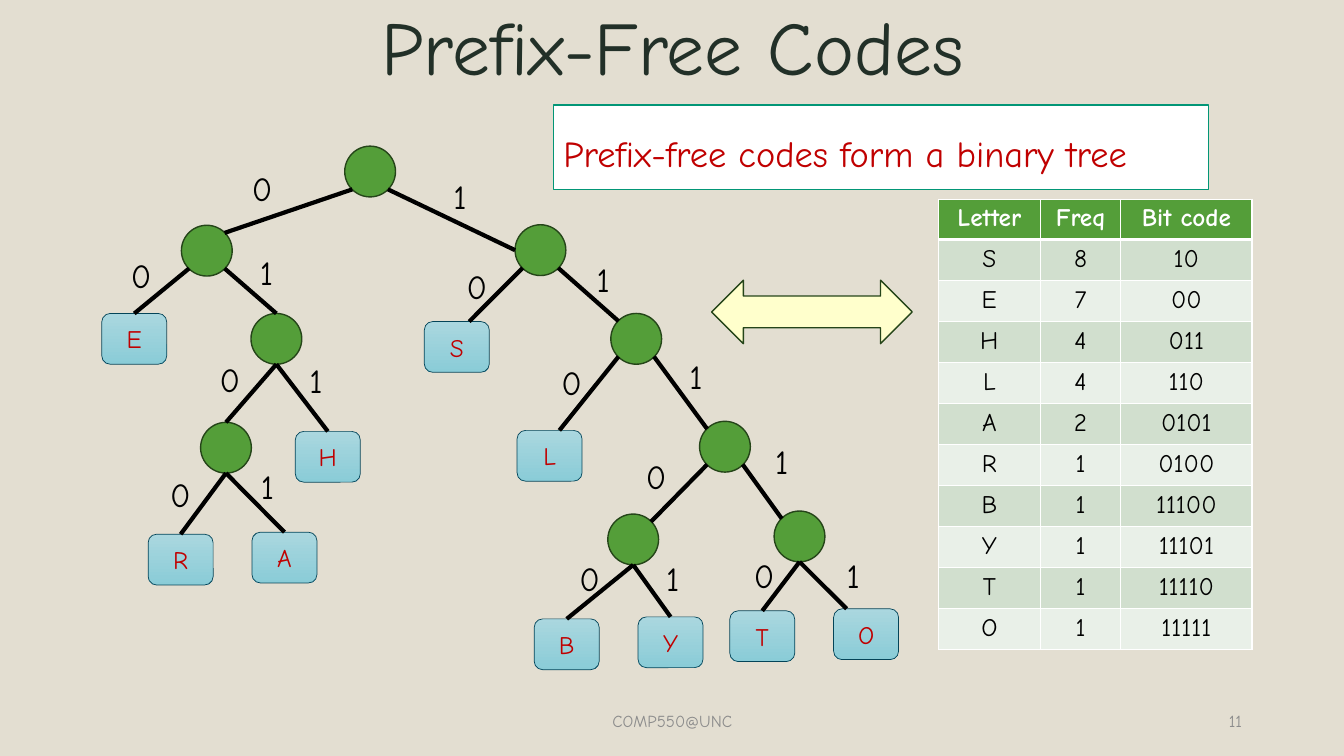
from dataclasses import dataclass
from typing import Optional

from lxml import etree
from pptx import Presentation
from pptx.dml.color import RGBColor
from pptx.enum.shapes import MSO_CONNECTOR, MSO_SHAPE
from pptx.enum.text import MSO_ANCHOR, MSO_AUTO_SIZE, PP_ALIGN
from pptx.oxml.ns import qn
from pptx.util import Inches, Pt

STRAIGHT = MSO_CONNECTOR.STRAIGHT
OVAL, ROUNDED = MSO_SHAPE.OVAL, MSO_SHAPE.ROUNDED_RECTANGLE
RECT, ARROW = MSO_SHAPE.RECTANGLE, MSO_SHAPE.LEFT_RIGHT_ARROW
LEFT_ALIGN, CENTER, RIGHT_ALIGN = PP_ALIGN.LEFT, PP_ALIGN.CENTER, PP_ALIGN.RIGHT
TOP_ANCHOR, MIDDLE = MSO_ANCHOR.TOP, MSO_ANCHOR.MIDDLE
GROW = MSO_AUTO_SIZE.SHAPE_TO_FIT_TEXT

FONT = "Comic Neue"
GREEN, DARK_GREEN, RED = "549E39", "254519", "C00000"
BLACK, WHITE, GRAY = "000000", "FFFFFF", "8C8C8C"
BANDS = ("E9F0E8", "D1DFCE")
COLS, ROWS = 133.33, 75
NODE_SIZE, LEAF_WIDTH = 5.04, 6.45
LABEL_WIDTHS = {"0": 4.1, "1": 3.5}

TOP, BOTTOM, LEFT = (0.5, 0), (0.5, 1), (0, 0.5)
TOP_LEFT, TOP_RIGHT = (0.15, 0.15), (0.85, 0.15)
LOW_LEFT, LOW_RIGHT = (0.15, 0.85), (0.85, 0.85)
SPREAD = {"0": LOW_LEFT, "1": LOW_RIGHT}
JOINED = {"0": BOTTOM, "1": BOTTOM}


@dataclass
class Node:
    code: str
    col: float
    row: float
    label: tuple = ()
    entry: tuple = TOP
    letter: str = ""
    exits: Optional[dict] = None

    @property
    def width(self) -> float:
        return LEAF_WIDTH if self.letter else NODE_SIZE

    def at(self, share: tuple) -> tuple:
        return self.col + share[0] * self.width, self.row + share[1] * NODE_SIZE


TREE = [
    Node("", 34.2, 14.5, exits=SPREAD),
    Node("0", 18, 22.35, (24, 16.2), TOP_RIGHT, exits=SPREAD),
    Node("1", 51.1, 22.3, (44, 17), LEFT, exits=SPREAD),
    Node("01", 24.9, 31.1, (24.8, 24.5), exits=JOINED),
    Node("010", 19.9, 41.9, (20.8, 35.1), exits=JOINED),
    Node("11", 60.6, 31.1, (58.2, 25.2), TOP_LEFT, exits=SPREAD),
    Node("111", 69.4, 41.8, (67.4, 34.8), TOP_LEFT, exits=SPREAD),
    Node("1110", 60.3, 51, (63.1, 44.7), TOP_RIGHT, exits=JOINED),
    Node("1111", 76.8, 50.7, (75.9, 43.3), TOP_LEFT, exits=JOINED),
    Node("00", 10.1, 31.1, (12, 24.8), letter="E"),
    Node("0100", 14.7, 53, (15.9, 46.5), letter="R"),
    Node("0101", 25, 52.8, (24.9, 45.7), letter="A"),
    Node("011", 29.3, 42.8, (29.7, 35.2), letter="H"),
    Node("10", 42.1, 31.9, (45.3, 25.9), (0.69, 0), "S"),
    Node("110", 51.3, 42.7, (54.7, 35.4), (0.65, 0), "L"),
    Node("11100", 53, 61.4, (56.5, 54.9), letter="B"),
    Node("11101", 63.3, 61.2, (65.1, 54.9), letter="Y"),
    Node("11110", 72.4, 60.6, (73.8, 54.6), letter="T"),
    Node("11111", 82.7, 60.4, (83, 54.6), (0.2, 0), "O"),
]
FREQS = {"S": 8, "E": 7, "H": 4, "L": 4, "A": 2, "R": 1, "B": 1, "Y": 1, "T": 1, "O": 1}


def rgb(color: str) -> RGBColor:
    return RGBColor.from_string(color)


def grid(*cells: float) -> list:
    return [Inches(c / 10) for c in cells]


def write(tf, text: str, size: float, color: str, align=CENTER, anchor=MIDDLE, bold: bool = False):
    tf.text = text
    tf.vertical_anchor = anchor
    p = tf.paragraphs[0]
    p.alignment = align
    r = p.runs[0]
    r.font.name, r.font.size, r.font.bold = FONT, Pt(size), bold
    r.font.color.rgb = rgb(color)
    return p


def add_text(s, box: tuple, text: str, size: float, color: str, align, anchor=MIDDLE, wrap: bool = True):
    tf = s.shapes.add_textbox(*grid(*box)).text_frame
    tf.word_wrap = wrap
    if not wrap:
        tf.auto_size = GROW
    write(tf, text, size, color, align, anchor)


def add_box(s, kind, box: tuple, fill: str, line: str, width: float = 1):
    sp = s.shapes.add_shape(kind, *grid(*box))
    sp.shadow.inherit = False
    sp.fill.solid()
    sp.fill.fore_color.rgb = rgb(fill)
    sp.line.color.rgb = rgb(line)
    sp.line.width = Pt(width)
    return sp


def add_node(s, node: Node):
    box = (node.col, node.row, node.width, NODE_SIZE)
    if not node.letter:
        return add_box(s, OVAL, box, GREEN, DARK_GREEN)
    sp = add_box(s, ROUNDED, box, BANDS[0], "044458", 0.5)
    sp.fill.gradient()
    sp.fill.gradient_angle = 270
    for stop, color in zip(sp.fill.gradient_stops, ("AAD7DF", "8ACCD7")):
        stop.color.rgb = rgb(color)
    write(sp.text_frame, node.letter, 18, RED)
    return sp


def add_edge(s, parent: Node, child: Node, child_shape) -> None:
    bit = child.code[-1]
    ends = parent.at(parent.exits[bit]) + child.at(child.entry)
    edge = s.shapes.add_connector(STRAIGHT, *grid(*ends))
    if child.letter and child.entry == TOP:
        edge.end_connect(child_shape, 0)
    edge.line.color.rgb = rgb(BLACK)
    edge.line.width = Pt(3)
    etree.SubElement(edge._element.spPr, qn("a:effectLst"))
    add_text(s, (*child.label, LABEL_WIDTHS[bit], 5), bit, 24, BLACK, LEFT_ALIGN, TOP_ANCHOR, wrap=False)


def add_tree(s) -> None:
    shapes = {node.code: add_node(s, node) for node in TREE}
    nodes = {node.code: node for node in TREE}
    for node in TREE[1:]:
        add_edge(s, nodes[node.code[:-1]], node, shapes[node.code])


def set_borders(cell, row: int) -> None:
    widths = {"L": 1, "R": 1, "T": 3 if row == 1 else 1, "B": 3 if row == 0 else 1}
    for side, width in widths.items():
        ln = etree.SubElement(cell._tc.get_or_add_tcPr(), qn(f"a:ln{side}"), w=str(Pt(width)))
        fill = etree.SubElement(ln, qn("a:solidFill"))
        etree.SubElement(fill, qn("a:srgbClr"), val=WHITE)


def add_code_table(s) -> None:
    codes = {node.letter: node.code for node in TREE if node.letter}
    rows = [("Letter", "Freq", "Bit code")]
    rows += [(letter, str(freq), codes[letter]) for letter, freq in FREQS.items()]
    table = s.shapes.add_table(len(rows), 3, *grid(93.1, 19.75, 31.1, 44.6)).table
    for column, width in zip(table.columns, grid(10.1, 8, 13)):
        column.width = width
    for i, values in enumerate(rows):
        table.rows[i].height = grid(4.07 if i else 3.9)[0]
        for j, value in enumerate(values):
            cell = table.cell(i, j)
            set_borders(cell, i)
            cell.fill.solid()
            cell.fill.fore_color.rgb = rgb(BANDS[i % 2] if i else GREEN)
            write(cell.text_frame, value, 18, BLACK if i else WHITE, anchor=TOP_ANCHOR, bold=i == 0)


def set_title(s) -> None:
    title = s.shapes.title
    title.left, title.top, title.width, title.height = grid(9.2, 0, 115, 10.2)
    p = write(title.text_frame, "Prefix-Free Codes", 54, "223028")
    p.line_spacing = 0.9
    effects = etree.Element(qn("a:effectLst"))
    shadow = etree.SubElement(effects, qn("a:outerShdw"), blurRad="38100", dist="38100", dir="2700000")
    color = etree.SubElement(shadow, qn("a:srgbClr"), val=BLACK)
    etree.SubElement(color, qn("a:alpha"), val="43000")
    p.runs[0].font._element.find(qn("a:solidFill")).addnext(effects)


def main() -> None:
    prs = Presentation()
    prs.slide_width, prs.slide_height = grid(COLS, ROWS)
    s = prs.slides.add_slide(prs.slide_layouts[5])
    s.background.fill.solid()
    s.background.fill.fore_color.rgb = rgb("E3DED1")
    set_title(s)
    add_text(s, (44.2, 69.5, 45, 4), "COMP550@UNC", 12, GRAY, CENTER)
    add_text(s, (94.2, 69.5, 30, 4), "11", 12, GRAY, RIGHT_ALIGN)
    add_code_table(s)
    add_tree(s)
    banner = add_box(s, RECT, (54.9, 10.4, 65, 8.4), WHITE, "029676")
    p = write(banner.text_frame, "Prefix-free codes form a binary tree", 26, RED, LEFT_ALIGN, TOP_ANCHOR)
    p.line_spacing, p.space_before = 1.5, Pt(10)
    add_box(s, ARROW, (70.6, 27.8, 19.9, 6.3), "FFFFCC", DARK_GREEN)
    prs.save("out.pptx")


if __name__ == "__main__":
    main()
